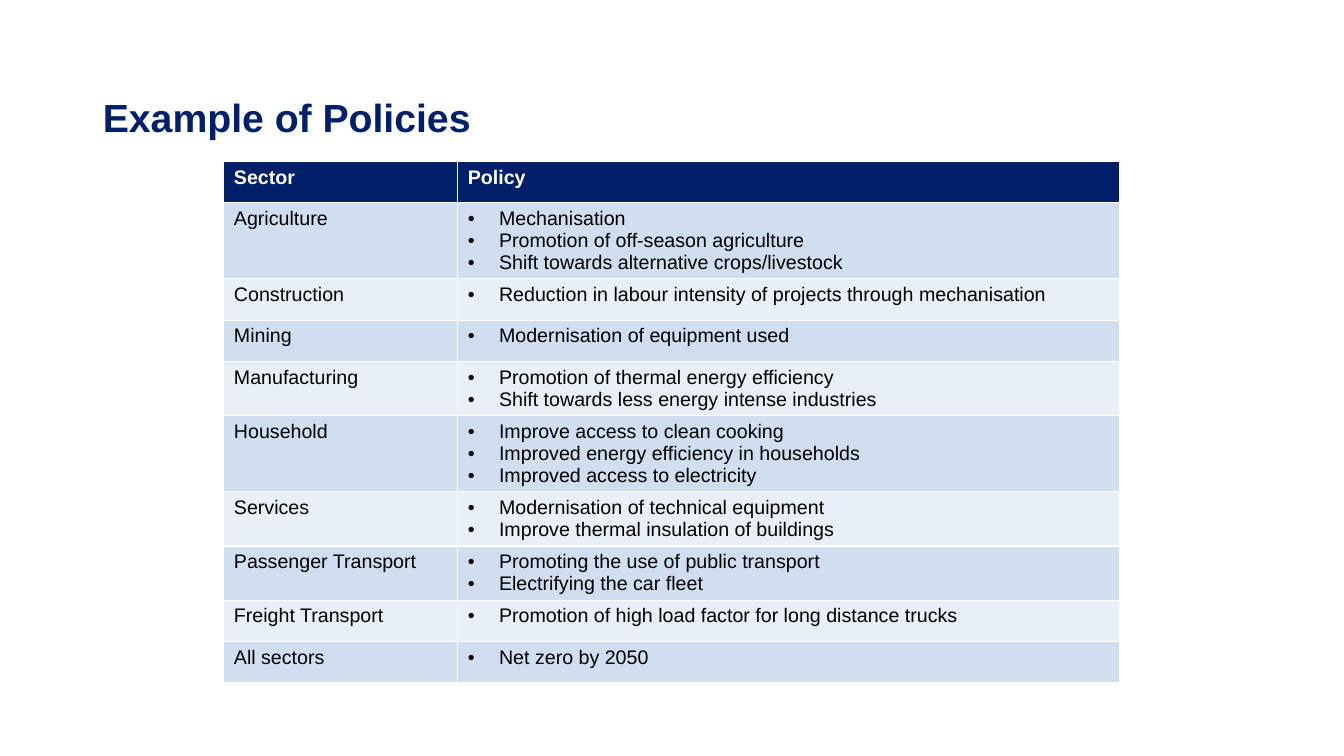
from dataclasses import dataclass

from lxml.etree import SubElement
from pptx import Presentation
from pptx.dml.color import RGBColor
from pptx.enum.text import MSO_ANCHOR, MSO_AUTO_SIZE, PP_ALIGN
from pptx.oxml.ns import qn
from pptx.util import Inches, Pt

TITLE = "Example of Policies"
HEADER = ("Sector", "Policy")
POLICIES = [
    ("Agriculture", ["Mechanisation", "Promotion of off-season agriculture",
                     "Shift towards alternative crops/livestock"]),
    ("Construction", ["Reduction in labour intensity of projects through mechanisation"]),
    ("Mining", ["Modernisation of equipment used"]),
    ("Manufacturing", ["Promotion of thermal energy efficiency",
                       "Shift towards less energy intense industries"]),
    ("Household", ["Improve access to clean cooking",
                   "Improved energy efficiency in households",
                   "Improved access to electricity"]),
    ("Services", ["Modernisation of technical equipment",
                  "Improve thermal insulation of buildings"]),
    ("Passenger Transport", ["Promoting the use of public transport",
                             "Electrifying the car fleet"]),
    ("Freight Transport", ["Promotion of high load factor for long distance trucks"]),
    ("All sectors", ["Net zero by 2050"]),
]


@dataclass(frozen=True)
class Theme:
    font: str = "Arial"
    title_size: int = 28
    table_size: int = 14
    navy: RGBColor = RGBColor(0x01, 0x20, 0x69)
    white: RGBColor = RGBColor(0xFF, 0xFF, 0xFF)
    black: RGBColor = RGBColor(0, 0, 0)
    bands: tuple = (RGBColor(0xD0, 0xDE, 0xEF), RGBColor(0xE9, 0xEF, 0xF7))


THEME = Theme()
COLUMN_WIDTHS = (2.32, 6.56)
MIN_ROW, CELL_PADDING, LINE_HEIGHT = 0.41, 0.1, 0.21
BULLET_INDENT = Inches(0.31)


def add_run(p, text, size, color, bold=False):
    r = p.add_run()
    r.text = text
    r.font.name = THEME.font
    r.font.size = Pt(size)
    r.font.bold = bold
    r.font.color.rgb = color


def add_bullet(p):
    pPr = p._p.get_or_add_pPr()
    pPr.set("marL", str(BULLET_INDENT))
    pPr.set("indent", str(-BULLET_INDENT))
    SubElement(pPr, qn("a:buFont"), typeface=THEME.font)
    SubElement(pPr, qn("a:buChar"), char="•")


def fill_cell(cell, lines, fill, color, bold=False, bulleted=False):
    cell.fill.solid()
    cell.fill.fore_color.rgb = fill
    tf = cell.text_frame
    for i, line in enumerate(lines):
        p = tf.add_paragraph() if i else tf.paragraphs[0]
        if bulleted:
            add_bullet(p)
        add_run(p, line, THEME.table_size, color, bold)


def add_title(slide):
    sp = slide.shapes.title
    sp.left, sp.top, sp.width, sp.height = map(Inches, (0.92, 0, 11.5, 1.45))
    tf = sp.text_frame
    tf.word_wrap = True
    tf.auto_size = MSO_AUTO_SIZE.NONE
    tf.vertical_anchor = MSO_ANCHOR.BOTTOM
    p = tf.paragraphs[0]
    p.alignment = PP_ALIGN.LEFT
    p.line_spacing = 0.9
    add_run(p, TITLE, THEME.title_size, THEME.navy, bold=True)


def add_policy_table(slide):
    heights = [MIN_ROW] + [max(MIN_ROW, CELL_PADDING + LINE_HEIGHT * len(policies))
                           for _, policies in POLICIES]
    table = slide.shapes.add_table(
        len(heights), len(COLUMN_WIDTHS), Inches(2.22), Inches(1.6),
        Inches(sum(COLUMN_WIDTHS)), Inches(sum(heights))).table
    for column, width in zip(table.columns, COLUMN_WIDTHS):
        column.width = Inches(width)
    for row, height in zip(table.rows, heights):
        row.height = Inches(height)

    for col, heading in enumerate(HEADER):
        fill_cell(table.cell(0, col), [heading], THEME.navy, THEME.white, bold=True)
    for i, (sector, policies) in enumerate(POLICIES):
        band = THEME.bands[i % 2]
        fill_cell(table.cell(i + 1, 0), [sector], band, THEME.black)
        fill_cell(table.cell(i + 1, 1), policies, band, THEME.black, bulleted=True)


def main():
    prs = Presentation()
    prs.slide_width, prs.slide_height = Inches(13.33), Inches(7.5)
    slide = prs.slides.add_slide(prs.slide_layouts.get_by_name("Title Only"))
    add_title(slide)
    add_policy_table(slide)
    prs.save("out.pptx")


if __name__ == "__main__":
    main()
